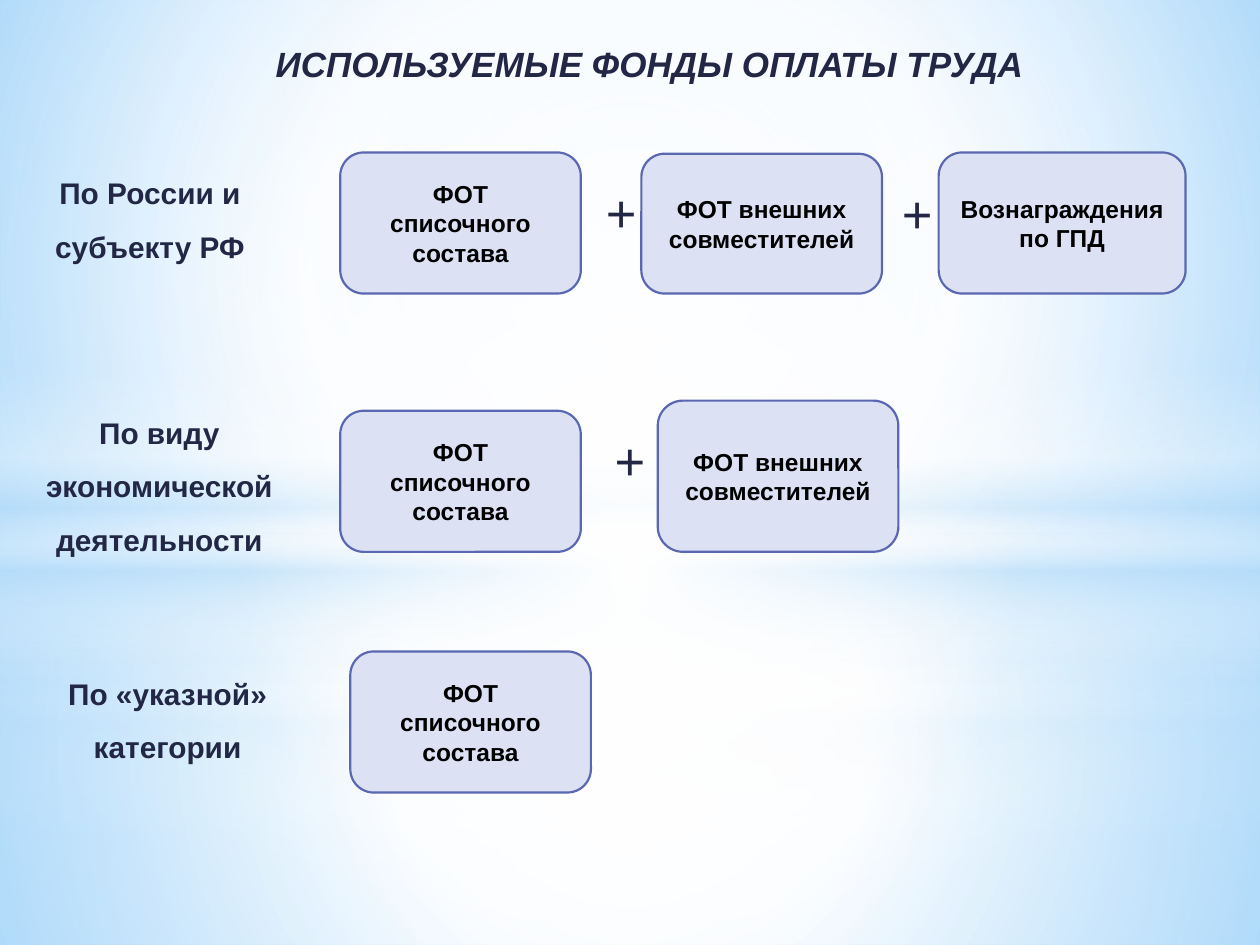
from lxml import etree
from pptx import Presentation
from pptx.dml.color import RGBColor
from pptx.enum.shapes import MSO_SHAPE as SHAPE
from pptx.enum.text import MSO_ANCHOR as ANCHOR, PP_ALIGN as ALIGN
from pptx.oxml.ns import qn
from pptx.util import Inches, Pt


class Theme:
    font = "Arial"
    ink, black = RGBColor.from_string("212745"), RGBColor.from_string("000000")
    box_fill, box_line = RGBColor.from_string("DCE1F4"), RGBColor.from_string("5968B0")
    white, sky = "FFFFFF", "B4DCFA"
    edge, rim = "9ED5FF", "5BB9FF"
    title, label, box, plus = Pt(20), Pt(17), Pt(14), Pt(30)


def set_gradient(owner, fill, stops, center=None):
    """Stops are (position %, colour, opacity %); without a center it runs down."""
    fill.gradient()
    grad = next(owner.element.iter(qn("a:gradFill")))
    for child in list(grad):
        grad.remove(child)
    stop_list = etree.SubElement(grad, qn("a:gsLst"))
    for pos, color, opacity in stops:
        stop = etree.SubElement(stop_list, qn("a:gs"), pos=str(pos * 1000))
        rgb = etree.SubElement(stop, qn("a:srgbClr"), val=color)
        if opacity < 100:
            etree.SubElement(rgb, qn("a:alpha"), val=str(opacity * 1000))
    if center:
        radial = etree.SubElement(grad, qn("a:path"), path="circle")
        sides = {side: str(v * 1000) for side, v in zip("ltrb", center)}
        etree.SubElement(radial, qn("a:fillToRect"), **sides)
    else:
        etree.SubElement(grad, qn("a:lin"), ang="5400000", scaled="0")


def write(sp, text, size, color, bold=True, anchor=ANCHOR.TOP):
    tf = sp.text_frame
    tf.word_wrap = True
    tf.vertical_anchor = anchor
    p = tf.paragraphs[0]
    p.text = text
    p.alignment = ALIGN.CENTER
    p.font.name, p.font.size, p.font.bold = Theme.font, size, bold
    p.font.color.rgb = color
    return p


prs = Presentation()
prs.slide_width, prs.slide_height = Inches(10), Inches(7.5)
s = prs.slides.add_slide(prs.slide_layouts[6])

# Background
set_gradient(s, s.background.fill,
             [(0, Theme.edge, 100), (60, Theme.white, 100), (100, Theme.rim, 100)],
             (20, 10, 20, 60))

# Full-width light layers: shape, top, height, stops, center
W, B = Theme.white, Theme.sky
MIDDLE = (50, 50, 50, 50)
BAND = [(0, W, 0), (29, W, 30), (45, B, 40), (55, W, 26), (65, B, 60), (100, W, 0)]
layers = [
    (SHAPE.RECTANGLE, 5.58, 1.92, [(0, W, 91), (37, W, 76), (100, B, 79)], MIDDLE),
    (SHAPE.RECTANGLE, 0, 5.58, [(0, W, 89), (48, W, 62), (100, B, 79)], MIDDLE),
    (SHAPE.RECTANGLE, 4.12, 2.5, BAND, None),
    (SHAPE.OVAL, 1.75, 5.58, [(0, W, 100), (56, W, 0)], MIDDLE),
    (SHAPE.RECTANGLE, 4.23, 3.27, [(0, W, 92), (37, W, 77), (100, B, 80)], MIDDLE),
    (SHAPE.RECTANGLE, 0, 4.23, [(0, W, 90), (48, W, 63), (100, B, 80)], MIDDLE),
    (SHAPE.RECTANGLE, 2.9, 2.5, BAND, None),
    (SHAPE.OVAL, 1.75, 5.58, [(0, W, 100), (54, W, 0)], MIDDLE),
]
for shape, top, height, stops, center in layers:
    sp = s.shapes.add_shape(shape, 0, Inches(top), prs.slide_width, Inches(height))
    sp.shadow.inherit = False
    sp.line.fill.background()
    set_gradient(sp, sp.fill, stops, center)

# Title
sp = s.shapes.add_textbox(Inches(0.39), Inches(0.29), Inches(9.53), Inches(0.55))
p = write(sp, "ИСПОЛЬЗУЕМЫЕ ФОНДЫ ОПЛАТЫ ТРУДА", Theme.title, Theme.ink)
p.font.italic = True

# Row labels: text, left, top, width, height
labels = [
    ("По России и субъекту РФ", 0.3, 1.2, 1.78, 0.94),
    ("По виду экономической деятельности", 0.2, 3.1, 2.13, 1.1),
    ("По «указной» категории", 0.44, 5.17, 1.78, 0.94),
]
for text, *place in labels:
    sp = s.shapes.add_textbox(*map(Inches, place))
    p = write(sp, text, Theme.label, Theme.ink)
    p.line_spacing = 1.5
    p.space_before = Pt(2)

# Payroll funds: text, left, top, width, height
STAFF, PART_TIME = "ФОТ списочного состава", "ФОТ внешних совместителей"
funds = [
    (STAFF, 2.7, 1.21, 1.91, 1.12),
    (PART_TIME, 5.09, 1.22, 1.91, 1.11),
    ("Вознаграждения по ГПД", 7.45, 1.21, 1.96, 1.12),
    (STAFF, 2.7, 3.26, 1.91, 1.12),
    (PART_TIME, 5.22, 3.18, 1.91, 1.2),
    (STAFF, 2.78, 5.17, 1.91, 1.12),
]
for text, *place in funds:
    sp = s.shapes.add_shape(SHAPE.ROUNDED_RECTANGLE, *map(Inches, place))
    sp.shadow.inherit = False
    sp.fill.solid()
    sp.fill.fore_color.rgb = Theme.box_fill
    sp.line.color.rgb = Theme.box_line
    sp.line.width = Pt(1.25)
    write(sp, text, Theme.box, Theme.black, anchor=ANCHOR.MIDDLE)

# Plus signs between the funds
for left, top in [(4.71, 1.35), (7.06, 1.36), (4.78, 3.32)]:
    sp = s.shapes.add_textbox(Inches(left), Inches(top), Inches(0.29), Inches(0.66))
    write(sp, "+", Theme.plus, Theme.ink, bold=False, anchor=ANCHOR.MIDDLE)

prs.save("out.pptx")
